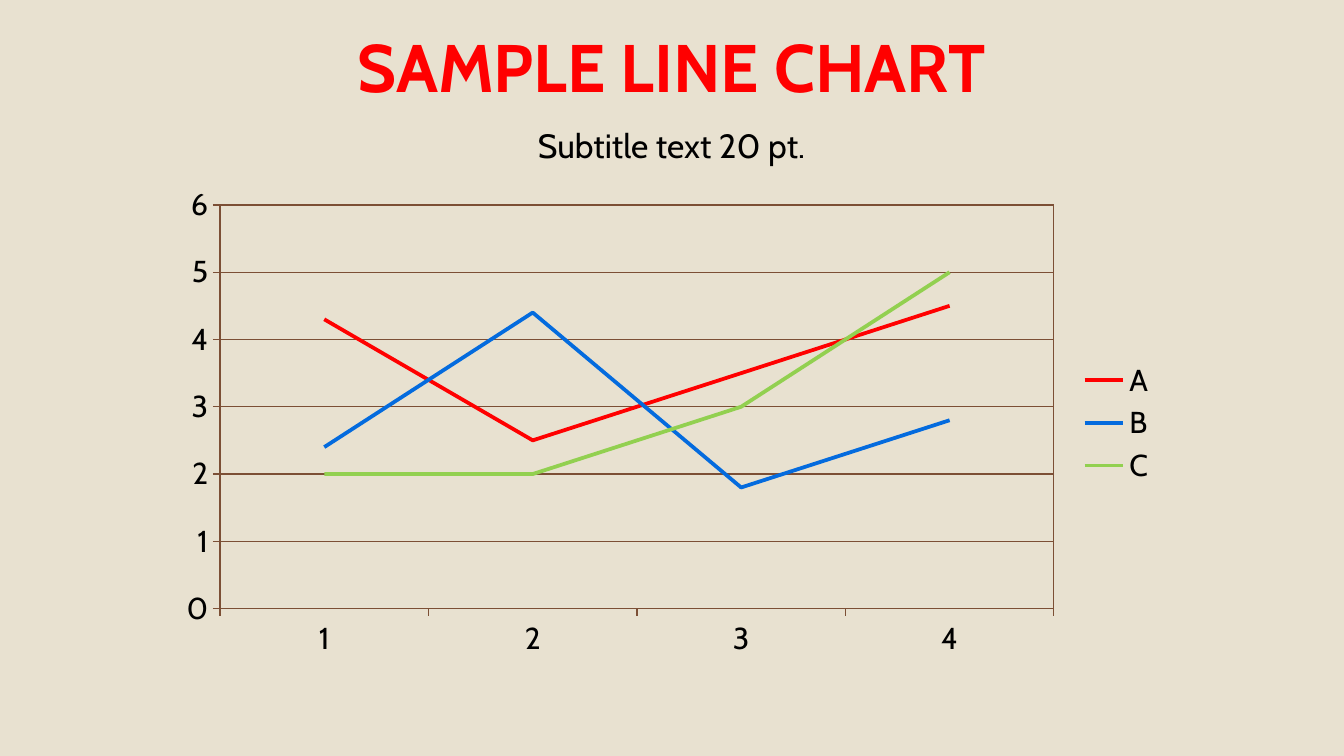
from pptx import Presentation
from pptx.chart.data import CategoryChartData
from pptx.dml.color import RGBColor
from pptx.enum.chart import XL_CHART_TYPE as ChartType
from pptx.enum.chart import XL_LEGEND_POSITION as LegendPosition
from pptx.enum.chart import XL_MARKER_STYLE as MarkerStyle
from pptx.enum.chart import XL_TICK_MARK as TickMark
from pptx.enum.text import MSO_ANCHOR as Anchor
from pptx.enum.text import PP_ALIGN as Align
from pptx.oxml import parse_xml
from pptx.oxml.ns import nsdecls, qn
from pptx.util import Pt

PX = 7557
FONT = "Cabin"
SAND = RGBColor(0xE8, 0xE1, 0xD0)
RED = RGBColor(0xFF, 0x00, 0x00)
BLUE = RGBColor(0x04, 0x6B, 0xDE)
GREEN = RGBColor(0x92, 0xD0, 0x50)
BROWN = RGBColor(0x7C, 0x4F, 0x35)
BLACK = RGBColor(0x00, 0x00, 0x00)

SERIES = [
    ("A", (4.3, 2.5, 3.5, 4.5), RED),
    ("B", (2.4, 4.4, 1.8, 2.8), BLUE),
    ("C", (2, 2, 3, 5), GREEN),
]


def scale(box):
    """Turn a box in px into EMU."""
    return [length * PX for length in box]


def set_format(target, values):
    """Set each attribute of the target from a dict."""
    for name, value in values.items():
        setattr(target, name, value)


def set_font(font, size, color, bold=False):
    """Apply the slide's typeface with a size and colour."""
    set_format(font, {"name": FONT, "size": Pt(size), "bold": bold})
    font.color.rgb = color


def set_line(line, color, width):
    """Give a line its colour and width in points."""
    line.color.rgb = color
    line.width = Pt(width)


def add_heading(slide, box, text, size, color, bold=False):
    """Place one centred line of text in the box."""
    frame = slide.shapes.add_textbox(*scale(box)).text_frame
    set_format(frame, {"word_wrap": True, "vertical_anchor": Anchor.MIDDLE})
    paragraph = frame.paragraphs[0]
    set_format(paragraph, {"alignment": Align.CENTER, "line_spacing": 0.9})
    run = paragraph.add_run()
    run.text = text
    set_font(run.font, size, color, bold)


def frame_plot(chart, box, plot_box):
    """Fix the inner plot area, given in px within the chart box, and outline it."""
    width, height = box[2:]
    fractions = [round(length / whole, 3)
                 for length, whole in zip(plot_box, (width, height) * 2)]
    places = "".join(f'<c:{tag} val="{value}"/>' for tag, value in zip("xywh", fractions))
    plot_area = chart._chartSpace.chart.plotArea
    for layout in plot_area.findall(qn("c:layout")):
        plot_area.remove(layout)
    plot_area.insert(0, parse_xml(
        f'<c:layout {nsdecls("c")}><c:manualLayout><c:layoutTarget val="inner"/>'
        f'<c:xMode val="edge"/><c:yMode val="edge"/>{places}</c:manualLayout></c:layout>'))
    plot_area.append(parse_xml(
        f'<c:spPr {nsdecls("c", "a")}><a:noFill/><a:ln w="{Pt(0.75)}"><a:solidFill>'
        f'<a:srgbClr val="{BROWN}"/></a:solidFill></a:ln></c:spPr>'))


def add_line_chart(slide, box):
    """Place the line chart with its axes and legend in the box."""
    data = CategoryChartData()
    data.categories = ["1", "2", "3", "4"]
    for name, values, _ in SERIES:
        data.add_series(name, values)
    chart = slide.shapes.add_chart(ChartType.LINE, *scale(box), data).chart
    set_format(chart, {"has_title": False, "has_legend": True})
    set_font(chart.font, 18, BLACK)
    set_format(chart.legend, {"position": LegendPosition.RIGHT, "include_in_layout": False})
    set_font(chart.legend.font, 18, BLACK)

    for axis in (chart.category_axis, chart.value_axis):
        set_format(axis, {"major_tick_mark": TickMark.OUTSIDE,
                          "minor_tick_mark": TickMark.NONE})
        set_font(axis.tick_labels.font, 18, BLACK)
        set_line(axis.format.line, BROWN, 0.75)
    set_format(chart.value_axis, {"minimum_scale": 0, "maximum_scale": 6,
                                  "major_unit": 1, "has_major_gridlines": True})
    set_line(chart.value_axis.major_gridlines.format.line, BROWN, 0.75)

    plot = chart.plots[0]
    plot.vary_by_categories = False
    for series, (_, _, color) in zip(plot.series, SERIES):
        series.smooth = False
        series.marker.style = MarkerStyle.NONE
        set_line(series.format.line, color, 2.25)
    frame_plot(chart, box, (53, 27, 834, 404))


def main():
    """Build the slide and save it."""
    presentation = Presentation()
    set_format(presentation, {"slide_width": 1344 * PX, "slide_height": 756 * PX})
    slide = presentation.slides.add_slide(presentation.slide_layouts[6])
    fill = slide.background.fill
    fill.solid()
    fill.fore_color.rgb = SAND
    add_heading(slide, (36, 21, 1271, 99), "SAMPLE LINE CHART", 40, RED, True)
    add_heading(slide, (100, 122, 1143, 52), "Subtitle text 20 pt.", 20, BLACK)
    add_line_chart(slide, (167, 178, 1001, 490))
    presentation.save("out.pptx")


if __name__ == "__main__":
    main()
